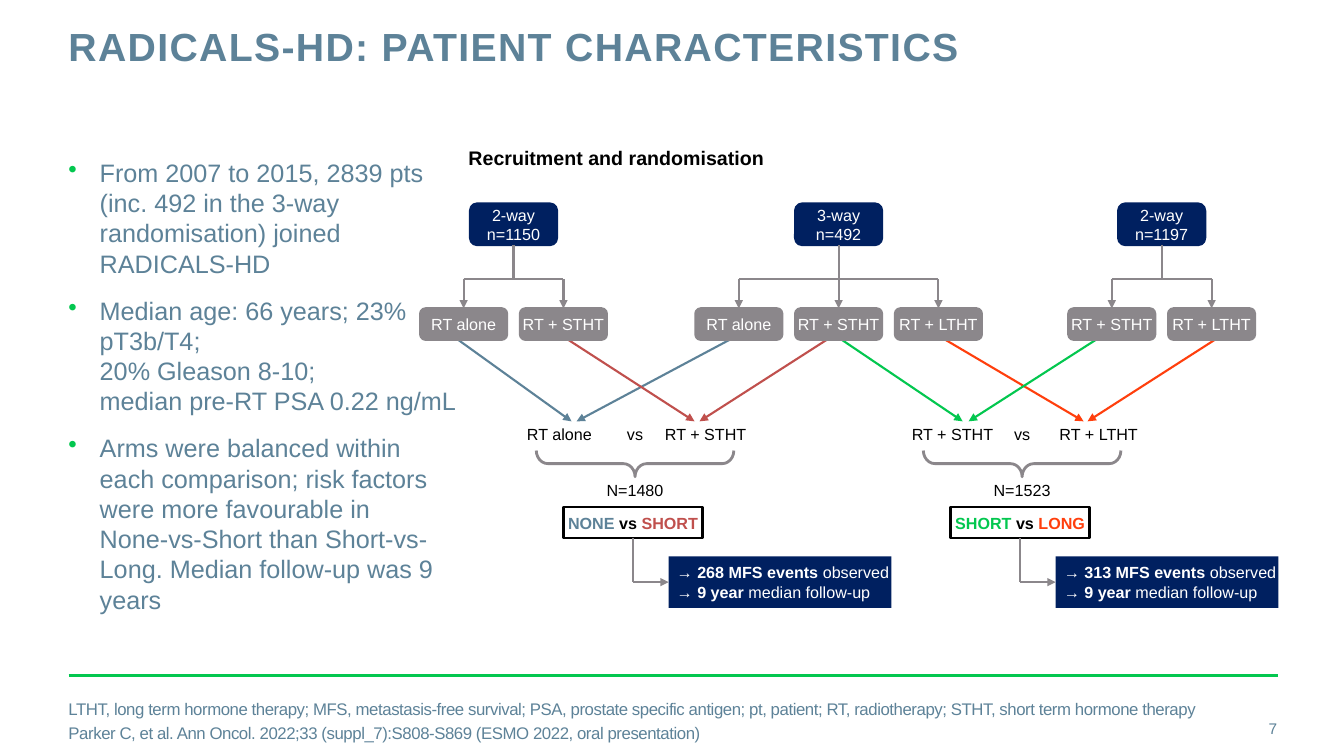
from copy import deepcopy
from dataclasses import dataclass
from typing import Optional

from lxml.etree import SubElement
from pptx import Presentation
from pptx.dml.color import RGBColor
from pptx.enum.shapes import MSO_CONNECTOR as CONN, MSO_SHAPE as SHAPE
from pptx.enum.text import MSO_ANCHOR as ANCHOR, PP_ALIGN as ALIGN
from pptx.oxml.ns import qn
from pptx.util import Inches, Pt

COLS, ROWS = 160, 90
NAVY, GREY, SLATE, GREEN = "002060", "8B878B", "5D8298", "03C74F"
RED, ORANGE, BLACK, WHITE = "C0504D", "FF3F0D", "000000", "FFFFFF"
ARM_STEP, ARM_W, ARM_H, ARM_TOP = 11.88, 10.32, 3.72, 36.72
ROOT_TOP, ROOT_H, BUS_ROW = 24.24, 4.92, 33.24
ARROW_END, LABEL_ROW, EVENT_ROW, EVENT_H = 50.16, 50.52, 66.24, 6.12

prs = Presentation()
prs.slide_width, prs.slide_height = Inches(13.333), Inches(7.5)
s = prs.slides.add_slide(prs.slide_layouts[6])


@dataclass
class Seg:
    text: str
    color: str = BLACK
    bold: bool = False


@dataclass
class Style:
    size: float = 11.5
    align: ALIGN = ALIGN.CENTER
    anchor: ANCHOR = ANCHOR.TOP
    before: float = 0
    left_inset: float = 0
    tracking: int = 0
    leading: Optional[float] = None
    bullet: bool = False


@dataclass
class Trial:
    center: float
    title: str
    arms: list[str]


@dataclass
class Flow:
    start: float
    row: float
    end: float
    color: str


@dataclass
class Comparison:
    center: float
    left: str
    left_at: float
    right: str
    right_at: float
    total: str
    verdict: list[Seg]
    events: str


def col(n: float) -> int:
    return round(prs.slide_width * n / COLS)


def row(n: float) -> int:
    return round(prs.slide_height * n / ROWS)


def rgb(value: str) -> RGBColor:
    return RGBColor.from_string(value)


def write(sp, paragraphs: list[list[Seg]], st: Style) -> None:
    tf = sp.text_frame
    tf.word_wrap = True
    tf.vertical_anchor = st.anchor
    tf.margin_left = col(st.left_inset)
    tf.margin_right = tf.margin_top = tf.margin_bottom = 0
    for i, segs in enumerate(paragraphs):
        p = tf.add_paragraph() if i else tf.paragraphs[0]
        p.alignment = st.align
        p.space_before = Pt(st.before if i else 0)
        if st.leading:
            p.line_spacing = Pt(st.leading)
        if st.bullet:
            pPr = p._p.get_or_add_pPr()
            pPr.set("marL", str(Inches(0.31)))
            pPr.set("indent", str(-Inches(0.31)))
            SubElement(SubElement(pPr, qn("a:buClr")), qn("a:srgbClr")).set("val", GREEN)
            SubElement(pPr, qn("a:buChar")).set("char", "•")
        for seg in segs:
            for k, line in enumerate(seg.text.split("\n")):
                if k:
                    p.add_line_break()
                r = p.add_run()
                r.text = line
                r.font.name, r.font.size, r.font.bold = "Arial", Pt(st.size), seg.bold
                r.font.color.rgb = rgb(seg.color)
                if st.tracking:
                    r._r.get_or_add_rPr().set("spc", str(st.tracking))
        for br in p._p.findall(qn("a:br")):
            br.append(deepcopy(p.runs[0]._r.rPr))


def text(x: float, y: float, w: float, h: float, paragraphs: list[list[Seg]], st: Style) -> None:
    write(s.shapes.add_textbox(col(x), row(y), col(w), row(h)), paragraphs, st)


def box(kind: SHAPE, x: float, y: float, w: float, h: float,
        fill: Optional[str], line: Optional[str], weight: float = 1.75):
    sp = s.shapes.add_shape(kind, col(x), row(y), col(w), row(h))
    sp.shadow.inherit = False
    if fill:
        sp.fill.solid()
        sp.fill.fore_color.rgb = rgb(fill)
    else:
        sp.fill.background()
    if line:
        sp.line.color.rgb = rgb(line)
        sp.line.width = Pt(weight)
    else:
        sp.line.fill.background()
    return sp


def rounded(center: float, y: float, h: float, fill: str, label: str):
    sp = box(SHAPE.ROUNDED_RECTANGLE, center - ARM_W / 2, y, ARM_W, h, fill, fill)
    sp.adjustments[0] = 0.169
    write(sp, [[Seg(label, WHITE)]], Style(anchor=ANCHOR.MIDDLE))
    return sp


def connect(x1: float, y1: float, x2: float, y2: float, color: str = GREY,
            weight: float = 1.5, arrow: bool = False, begin=None, end=None, end_site: int = 0) -> None:
    c = s.shapes.add_connector(CONN.STRAIGHT, col(x1), row(y1), col(x2), row(y2))
    c.line.color.rgb = rgb(color)
    c.line.width = Pt(weight)
    if arrow:
        SubElement(c.line._get_or_add_ln(), qn("a:tailEnd")).set("type", "triangle")
    SubElement(c._element.spPr, qn("a:effectLst"))
    if begin:
        c.begin_connect(begin, 2)
    if end:
        c.end_connect(end, end_site)


def draw_trial(t: Trial) -> None:
    centers = [t.center + ARM_STEP * (i - (len(t.arms) - 1) / 2) for i in range(len(t.arms))]
    root = rounded(t.center, ROOT_TOP, ROOT_H, NAVY, t.title)
    connect(centers[0], BUS_ROW, centers[-1], BUS_ROW)
    if len(t.arms) % 2 == 0:
        connect(t.center, ROOT_TOP + ROOT_H, t.center, BUS_ROW, begin=root)
    for x, label in zip(centers, t.arms):
        arm = rounded(x, ARM_TOP, ARM_H, GREY, label)
        middle = x == t.center
        connect(x, ROOT_TOP + ROOT_H if middle else BUS_ROW, x, ARM_TOP,
                arrow=True, begin=root if middle else None, end=arm)


def draw_comparison(c: Comparison) -> None:
    for x, label in ((c.left_at, c.left), (c.center, "vs"), (c.right_at, c.right)):
        text(x - 6, LABEL_ROW, 12, 2.28, [[Seg(label)]], Style())
    brace = box(SHAPE.RIGHT_BRACE, c.center - 1.56, 43.44, 3.12, 23.52, None, GREY, 2)
    brace.rotation = 90
    brace.adjustments[0] = 0.445
    text(c.center - 17, 57.24, 34, 2.28, [[Seg(c.total)]], Style())
    x, mid = c.center - 0.24, EVENT_ROW + EVENT_H / 2
    verdict = box(SHAPE.RECTANGLE, x - 8.28, 60.36, 16.56, 3.72, WHITE, BLACK)
    write(verdict, [c.verdict], Style(anchor=ANCHOR.MIDDLE))
    events = box(SHAPE.RECTANGLE, c.center + 4, EVENT_ROW, 26.52, EVENT_H, NAVY, None)
    write(events, [[Seg(f"→ {c.events} MFS events ", WHITE, True), Seg("observed\n→ ", WHITE),
                    Seg("9 year ", WHITE, True), Seg("median follow-up", WHITE)]],
          Style(align=ALIGN.LEFT, anchor=ANCHOR.MIDDLE, left_inset=0.96))
    connect(x, 64.08, x, mid, begin=verdict)
    connect(x, mid, c.center + 4, mid, arrow=True, end=events, end_site=1)


TRIALS = [
    Trial(61.14, "2-way\nn=1150", ["RT alone", "RT + STHT"]),
    Trial(99.84, "3-way\nn=492", ["RT alone", "RT + STHT", "RT + LTHT"]),
    Trial(138.3, "2-way\nn=1197", ["RT + STHT", "RT + LTHT"]),
]
FLOWS = [
    Flow(100.32, 39.24, 83.28, RED), Flow(86.88, 40.44, 68.64, SLATE),
    Flow(54.36, 40.32, 68.04, SLATE), Flow(67.44, 40.32, 82.68, RED),
    Flow(146.52, 39.24, 129.48, ORANGE), Flow(111.72, 39.96, 129, ORANGE),
    Flow(99.84, 40.2, 114.6, GREEN), Flow(132.36, 39.24, 115.32, GREEN),
]
COMPARISONS = [
    Comparison(75.6, "RT alone", 66.6, "RT + STHT", 84, "N=1480",
               [Seg("NONE", SLATE, True), Seg(" vs ", BLACK, True), Seg("SHORT", RED, True)], "268"),
    Comparison(121.68, "RT + STHT", 113.4, "RT + LTHT", 130.8, "N=1523",
               [Seg("SHORT", GREEN, True), Seg(" vs ", BLACK, True), Seg("LONG", ORANGE, True)], "313"),
]
FINDINGS = [
    "From 2007 to 2015, 2839 pts (inc. 492 in the 3-way randomisation) joined RADICALS-HD",
    "Median age: 66 years; 23% pT3b/T4;\n20% Gleason 8-10;\nmedian pre-RT PSA 0.22 ng/mL",
    "Arms were balanced within each comparison; risk factors were more favourable in "
    "None‑vs-Short than Short-vs-Long. Median follow-up was 9 years",
]
FOOTNOTES = [
    "LTHT, long term hormone therapy; MFS, metastasis-free survival; PSA, prostate specific antigen; "
    "pt, patient; RT, radiotherapy; STHT, short term hormone therapy",
    "Parker C, et al. Ann Oncol. 2022;33 (suppl_7):S808-S869 (ESMO 2022, oral presentation)",
]

connect(8.16, 80.4, 152.16, 80.4, GREEN, 2)
text(8.16, 3.24, 114.72, 10.56, [[Seg("RADICALS-HD: PATIENT CHARACTERISTICS", SLATE, True)]],
     Style(28, ALIGN.LEFT, tracking=100, leading=30))
text(8.16, 18.72, 46.32, 59.4, [[Seg(f, SLATE)] for f in FINDINGS],
     Style(18, ALIGN.LEFT, before=12, bullet=True))
text(8.16, 83.4, 138.96, 4.8, [[Seg(f, SLATE)] for f in FOOTNOTES],
     Style(12, ALIGN.LEFT, ANCHOR.MIDDLE, before=3, tracking=-30))
text(141.72, 84.36, 10.32, 4.8, [[Seg("7", SLATE)]], Style(11, ALIGN.RIGHT, ANCHOR.MIDDLE))
text(54.48, 16.68, 37.8, 4.08, [[Seg("Recruitment and randomisation", BLACK, True)]],
     Style(14, anchor=ANCHOR.MIDDLE))
for f in FLOWS:
    connect(f.start, f.row, f.end, ARROW_END, f.color, arrow=True)
for t in TRIALS:
    draw_trial(t)
for c in COMPARISONS:
    draw_comparison(c)

prs.save("out.pptx")
